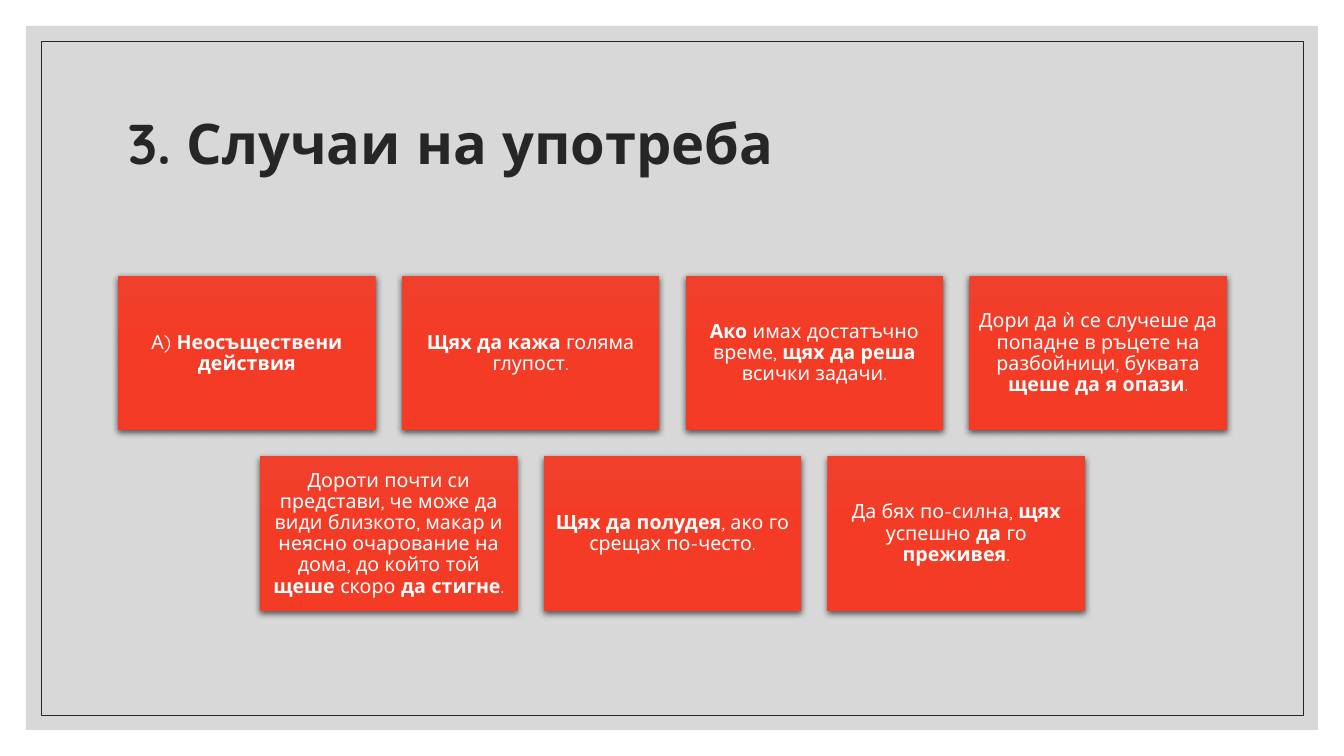
from copy import deepcopy

from lxml import etree
from pptx import Presentation
from pptx.dml.color import RGBColor
from pptx.enum.shapes import MSO_SHAPE
from pptx.enum.text import MSO_ANCHOR, MSO_AUTO_SIZE, PP_ALIGN
from pptx.oxml.ns import qn
from pptx.util import Pt

RECTANGLE = MSO_SHAPE.RECTANGLE
MIDDLE = MSO_ANCHOR.MIDDLE
NO_AUTOFIT = MSO_AUTO_SIZE.NONE
LEFT, CENTER = PP_ALIGN.LEFT, PP_ALIGN.CENTER

SLIDE_W, SLIDE_H = 1344, 756
EMU_PER_PX = 12192000 / SLIDE_W
FONT = "Quicksand"
COLORS = {
    "panel": "BFBFBF",
    "ink": "262626",
    "card_top": "F03F2B",
    "card_middle": "F43B26",
    "card_bottom": "F33B26",
    "card_text": "FFFFFF",
    "shadow": "000000",
}
TITLE = "3. Случаи на употреба"
EXAMPLE_ROWS = [
    [
        "А) **Неосъществени действия**",
        "**Щях да кажа** голяма глупост.",
        "**Ако **имах достатъчно време, **щях да реша** всички задачи.",
        "Дори да ѝ се случеше да попадне в ръцете на разбойници, буквата "
        "**щеше да я опази**.",
    ],
    [
        "Дороти почти си представи, че може да види близкото, макар и неясно "
        "очарование на дома, до който той **щеше **скоро **да стигне**.",
        "**Щях да полудея**, ако го срещах по-често.",
        "Да бях по-силна, **щях** успешно **да **го **преживея**.",
    ],
]


def px(length):
    """Turn pixels into EMU."""
    return round(length * EMU_PER_PX)


def rgb(name):
    """Look up a named colour."""
    return RGBColor.from_string(COLORS[name])


def set_all(target, values):
    """Set each attribute of the target from a dict."""
    for name, value in values.items():
        setattr(target, name, value)


def add_rectangle(slide, box):
    """Add a plain rectangle without shadow to the box."""
    left, top, width, height = map(px, box)
    rectangle = slide.shapes.add_shape(RECTANGLE, left, top, width, height)
    rectangle.shadow.inherit = False
    return rectangle


def write_text(frame, marked_text, size, color, align, inset):
    """Write one paragraph in which ** switches bold on and off."""
    set_all(frame, {"word_wrap": True, "auto_size": NO_AUTOFIT,
                    "vertical_anchor": MIDDLE})
    set_all(frame, {f"margin_{side}": px(inset)
                    for side in ("left", "top", "right", "bottom")})
    paragraph = frame.paragraphs[0]
    set_all(paragraph, {"alignment": align, "line_spacing": 0.9})
    for index, words in enumerate(marked_text.split("**")):
        if words:
            run = paragraph.add_run()
            run.text = words
            set_all(run.font, {"name": FONT, "size": Pt(size), "bold": index % 2 == 1})
            run.font.color.rgb = rgb(color)


def draw_frame(slide, box):
    """Draw the translucent panel with a thin outline inside it."""
    left, top, width, height = box
    panel = add_rectangle(slide, box)
    panel.fill.solid()
    panel.fill.fore_color.rgb = rgb("panel")
    panel.line.fill.background()
    tint = panel._element.spPr.find(f"{qn('a:solidFill')}/{qn('a:srgbClr')}")
    etree.SubElement(tint, qn("a:alpha"), val="60000")

    inset = 15
    outline = add_rectangle(
        slide, (left + inset, top + inset, width - 2 * inset, height - 2 * inset))
    outline.fill.background()
    outline.line.color.rgb = rgb("ink")
    outline.line.width = Pt(0.5)


def place_title(slide, box):
    """Format the title placeholder and bring it in front of the frame."""
    title = slide.shapes.title
    set_all(title, dict(zip(("left", "top", "width", "height"), map(px, box))))
    write_text(title.text_frame, f"**{TITLE}**", 40, "ink", LEFT, 10)
    slide.shapes._spTree.append(title._element)


def paint_card(card):
    """Give a card its three-stop gradient and soft shadow."""
    card.line.fill.background()
    card.fill.gradient()
    card.fill.gradient_angle = 270
    stop_list = card._element.spPr.find(f".//{qn('a:gsLst')}")
    stop_list.insert(1, deepcopy(stop_list[0]))
    names = ("card_top", "card_middle", "card_bottom")
    for stop, name, position in zip(card.fill.gradient_stops, names, (0, 0.5, 1)):
        stop.color.rgb = rgb(name)
        stop.position = position

    effects = card._element.spPr.find(qn("a:effectLst"))
    shadow = etree.SubElement(effects, qn("a:outerShdw"), blurRad=str(Pt(4.5)),
                              dist=str(Pt(1.5)), dir="5400000", rotWithShape="0")
    shade = etree.SubElement(shadow, qn("a:srgbClr"), val=COLORS["shadow"])
    etree.SubElement(shade, qn("a:alpha"), val="63000")


def draw_cards(slide, box):
    """Lay the example cards out in centred rows inside the box."""
    left, top, width, height = box
    gap = 26
    columns = max(map(len, EXAMPLE_ROWS))
    card_w = (width - gap * (columns - 1)) / columns
    card_h = (height - gap * (len(EXAMPLE_ROWS) - 1)) / len(EXAMPLE_ROWS)
    for row, examples in enumerate(EXAMPLE_ROWS):
        indent = (columns - len(examples)) * (card_w + gap) / 2
        for column, example in enumerate(examples):
            card = add_rectangle(slide, (left + indent + column * (card_w + gap),
                                         top + row * (card_h + gap), card_w, card_h))
            paint_card(card)
            write_text(card.text_frame, example, 14, "card_text", CENTER, 6)


def main():
    """Build the slide and save it."""
    deck = Presentation()
    set_all(deck, {"slide_width": px(SLIDE_W), "slide_height": px(SLIDE_H)})
    slide = deck.slides.add_slide(deck.slide_layouts.get_by_name("Title Only"))
    draw_frame(slide, (26, 26, 1292, 704))
    place_title(slide, (118, 71, 1109, 151))
    draw_cards(slide, (118, 276, 1109, 335))
    deck.save("out.pptx")


if __name__ == "__main__":
    main()
